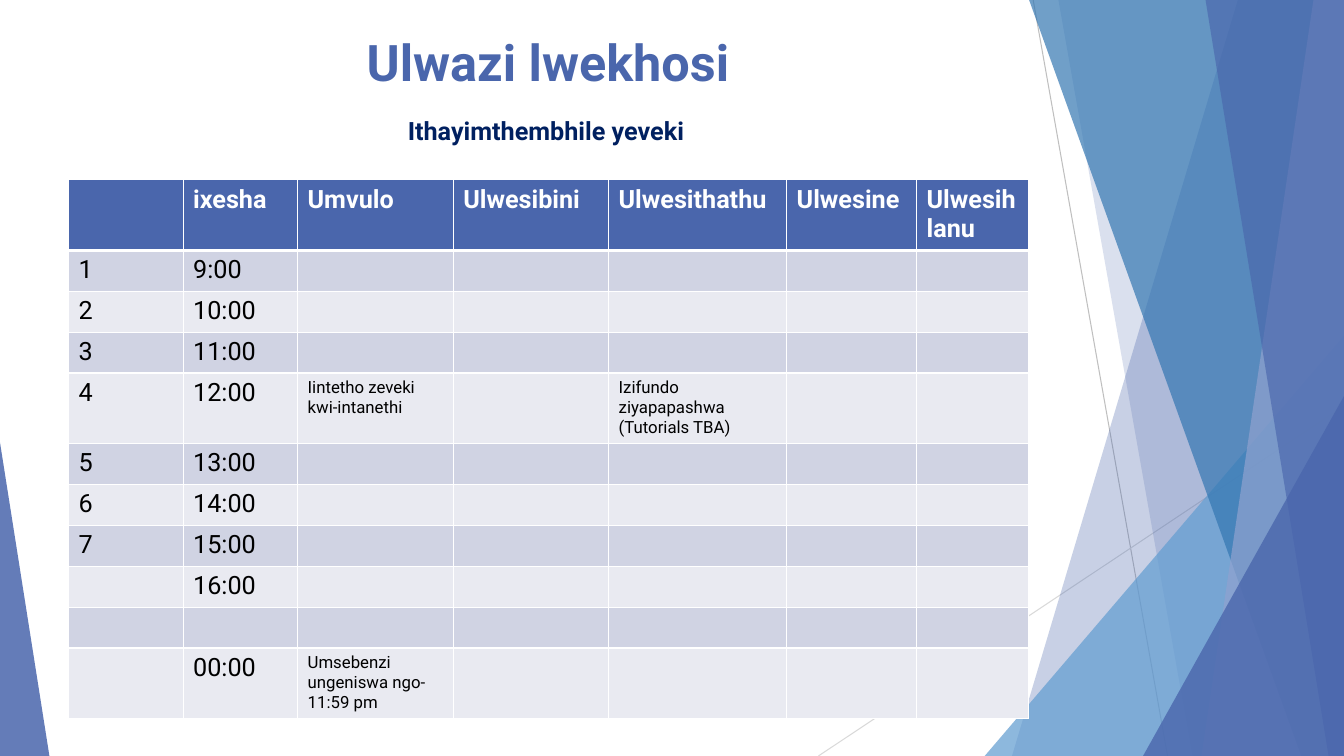
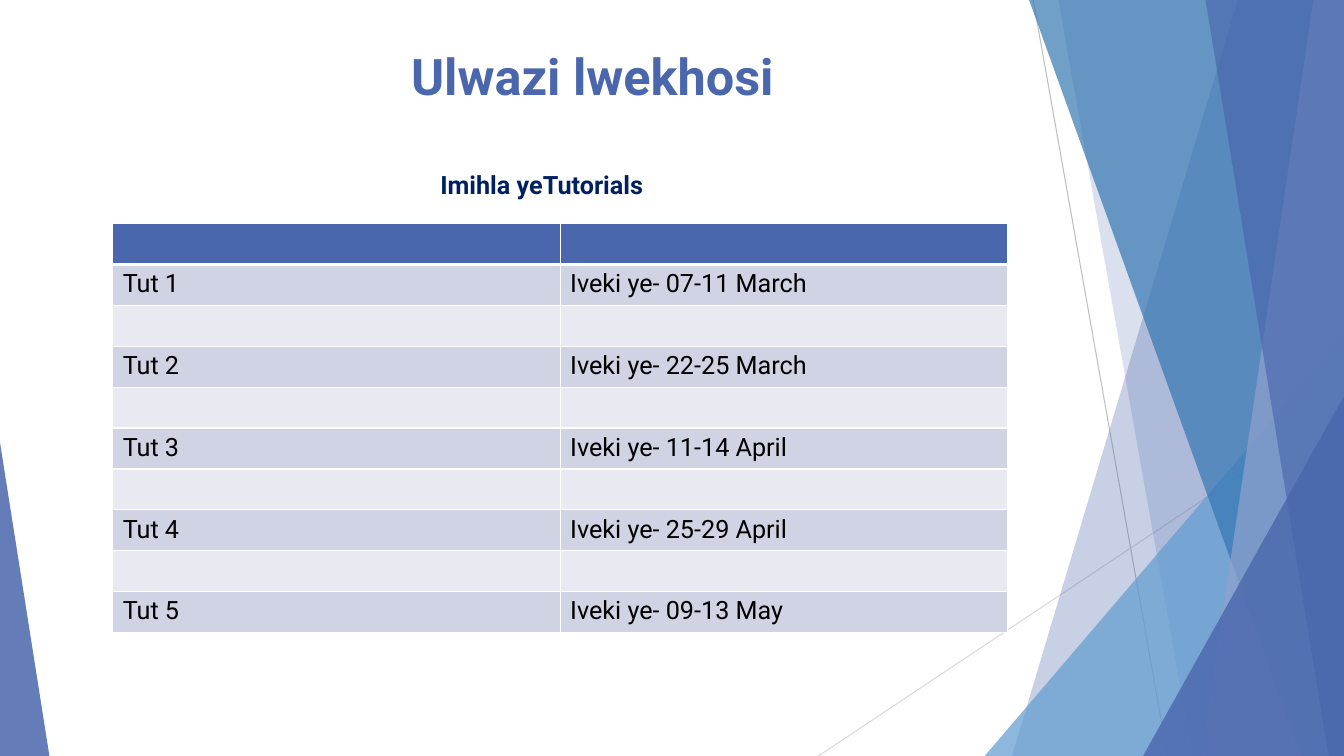
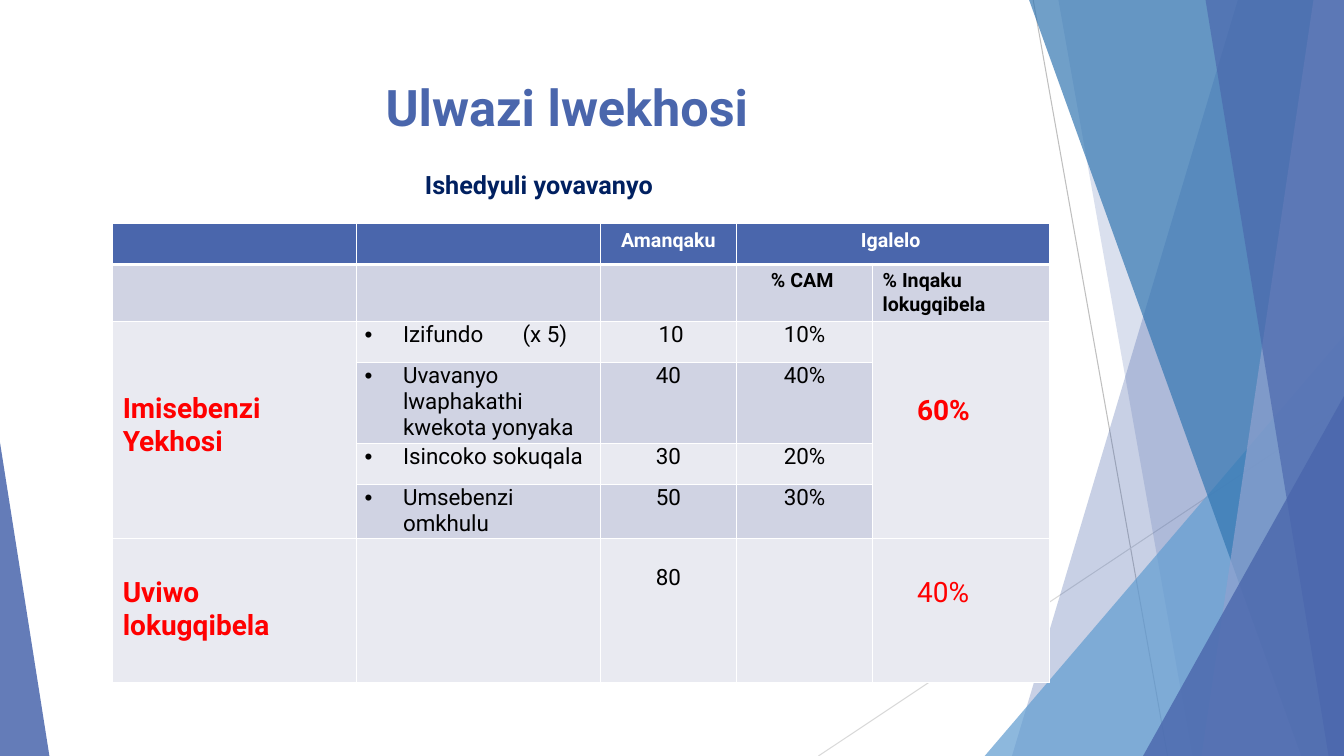
import pptx
import pptx.util
import pptx.dml.color
import pptx.enum.shapes
import pptx.enum.text
import pptx.oxml
import pptx.oxml.ns
import lxml.etree

Pt = pptx.util.Pt
Rgb = pptx.dml.color.RGBColor.from_string
qn = pptx.oxml.ns.qn
Kind = pptx.enum.shapes.MSO_SHAPE
Align = pptx.enum.text.PP_ALIGN


class Theme:
    font = "Roboto"
    blue, sky, teal, pale = "4A66AC", "629DD1", "3477B2", "90A2CF"
    navy, red, black, white = "002060", "FF0000", "000000", "FFFFFF"
    dark, light = "D0D3E3", "E9EAF1"
    title, head, body, mid, label, note = 36, 18, 18, 16, 14, 12
    large = 20


def put(frame, text, size, color, bold=False, align=None):
    for i, line in enumerate(text.split("\n")):
        para = frame.paragraphs[0] if i == 0 else frame.add_paragraph()
        para.alignment = align
        run = para.add_run()
        run.text = line
        run.font.name = Theme.font
        run.font.size = Pt(size)
        run.font.bold = bold
        run.font.color.rgb = Rgb(color)


def grid(slide, left, top, cols, rows):
    frame = slide.shapes.add_table(len(rows), len(cols), Pt(left), Pt(top), Pt(sum(cols)), Pt(sum(rows)))
    table = frame.table
    for col, width in zip(table.columns, cols):
        col.width = Pt(width)
    for r, height in enumerate(rows):
        table.rows[r].height = Pt(height)
        for cell in table.rows[r].cells:
            props = cell._tc.get_or_add_tcPr()
            for side in "LRTB":
                thick = (r, side) in ((0, "B"), (1, "T"))
                line = lxml.etree.SubElement(props, qn("a:ln" + side), w=str(Pt(3 if thick else 1)))
                fill = lxml.etree.SubElement(line, qn("a:solidFill"))
                lxml.etree.SubElement(fill, qn("a:srgbClr"), val=Theme.white)
            cell.fill.solid()
            shade = Theme.blue if r == 0 else Theme.dark if r % 2 else Theme.light
            cell.fill.fore_color.rgb = Rgb(shade)
    return table


deck = pptx.Presentation()
wide, high = 960, 540
deck.slide_width, deck.slide_height = Pt(wide), Pt(high)
blank = deck.slide_layouts[6]
for holder in list(blank.placeholders):
    holder.element.getparent().remove(holder.element)

heads = [
    ("Ulwazi lwekhosi", 391.5, 19, "Ithayimthembhile yeveki", 390, 78.5),
    ("Ulwazi lwekhosi", 423.2, 29, "Imihla yeTutorials", 387, 117.4),
    ("Ulwazi lwekhosi", 405, 50.5, "Ishedyuli yovavanyo", 385, 117.4),
]
slides = [deck.slides.add_slide(blank) for head in heads]

shapes = slides[0].shapes
for x1, y1, x2, y2, color in ((738, 0, 834, high, "BFBFBF"), (wide, 290, 584.6, high, "D9D9D9")):
    line = shapes.add_connector(pptx.enum.shapes.MSO_CONNECTOR.STRAIGHT, Pt(x1), Pt(y1), Pt(x2), Pt(y2))
    line.line.color.rgb = Rgb(color)
    line.line.width = Pt(0.75)
    lxml.etree.SubElement(line.element.spPr, qn("a:effectLst"))

bands = [
    ("band", 884.2, 722.9, Theme.blue, 30),
    ("band", 756, 851.8, Theme.blue, 20),
    ("wedge", 703.4, 239.8, 256.6, 1, Theme.sky, 72),
    ("band", 735.1, 929.5, Theme.teal, 70),
    ("band", 938.2, 858.2, Theme.pale, 70),
    ("band", 861.1, 949, Theme.blue, 65),
    ("wedge", 816.5, 283, 143.5, 1, Theme.blue, 80),
    ("wedge", 0, 316.1, 35.3, 0, Theme.blue, 85),
]
for kind, *place, color, alpha in bands:
    if kind == "band":
        upper, lower = place
        pen = shapes.build_freeform(Pt(upper), 0)
        pen.add_line_segments([(Pt(wide), 0), (Pt(wide), Pt(high)), (Pt(lower), Pt(high))])
        shape = pen.convert_to_shape()
    else:
        left, top, width, tip = place
        shape = shapes.add_shape(Kind.ISOSCELES_TRIANGLE, Pt(left), Pt(top), Pt(width), Pt(high - top))
        shape.adjustments[0] = tip
    shape.shadow.inherit = False
    shape.line.fill.background()
    shape.fill.solid()
    shape.fill.fore_color.rgb = Rgb(color)
    tint = shape.element.spPr.find(qn("a:solidFill")).find(qn("a:srgbClr"))
    lxml.etree.SubElement(tint, qn("a:alpha"), val=str(alpha * 1000))

for shape in list(shapes):
    blank.shapes.element.append(shape.element)

for slide, (title, mid, top, sub, submid, subtop) in zip(slides, heads):
    for text, center, y, width, height, size, color in (
        (title, mid, top, 676.8, 62, Theme.title, Theme.blue),
        (sub, submid, subtop, 321, 29, Theme.head, Theme.navy),
    ):
        box = slide.shapes.add_textbox(Pt(center - width / 2), Pt(y), Pt(width), Pt(height))
        box.text_frame.word_wrap = True
        put(box.text_frame, text, size, color, True, Align.CENTER)

step = 29.2
tall = 49.2
week = grid(slides[0], 49, 128.4, [81.8, 81.8, 111.2, 111, 127.2, 92.8, 80],
            [tall] + [step] * 3 + [tall] + [step] * 5 + [tall])
days = ["ixesha", "Umvulo", "Ulwesibini", "Ulwesithathu", "Ulwesine", "Ulwesihlanu"]
for c, day in enumerate(days, 1):
    put(week.cell(0, c).text_frame, day, Theme.head, Theme.white, True)
for r in range(1, 8):
    put(week.cell(r, 0).text_frame, str(r), Theme.body, Theme.black)
hours = [f"{hour}:00" for hour in range(9, 17)]
for r, hour in [*enumerate(hours, 1), (10, "00:00")]:
    put(week.cell(r, 1).text_frame, hour, Theme.body, Theme.black)
for r, c, note in (
    (4, 2, "Iintetho zeveki kwi-intanethi"),
    (4, 4, "Izifundo ziyapapashwa\n(Tutorials TBA)"),
    (10, 2, "Umsebenzi ungeniswa ngo- 11:59 pm"),
):
    put(week.cell(r, c).text_frame, note, Theme.note, Theme.black)

dates = grid(slides[1], 80.5, 159.8, [319.6] * 2, [step] * 10)
spans = ["07-11 March", "22-25 March", "11-14 April", "25-29 April", "09-13 May"]
for i, span in enumerate(spans):
    put(dates.cell(2 * i + 1, 0).text_frame, f"Tut {i + 1}", Theme.body, Theme.black)
    put(dates.cell(2 * i + 1, 1).text_frame, f"Iveki ye- {span}", Theme.body, Theme.black)

marks = grid(slides[2], 80.5, 159.8, [174.2, 174.2, 97.2, 97.2, 126.6],
             [step, 40.8, step, 57.8, step, 38.6, 103])
marks.cell(0, 3).merge(marks.cell(0, 4))
for c in (0, 4):
    marks.cell(2, c).merge(marks.cell(5, c))
for r, c, text, color, align in (
    (0, 2, "Amanqaku", Theme.white, Align.CENTER),
    (0, 3, "Igalelo ", Theme.white, Align.CENTER),
    (1, 3, "% CAM", Theme.black, None),
    (1, 4, "% Inqaku lokugqibela", Theme.black, None),
):
    put(marks.cell(r, c).text_frame, text, Theme.label, color, True, align)
marks.cell(1, 3).margin_left = Pt(24.6)

tasks = [
    ("Izifundo", " 10", "10%"),
    ("Uvavanyo lwaphakathi kwekota yonyaka", "40", "40%"),
    ("Isincoko sokuqala", "30", "20%"),
    ("Umsebenzi omkhulu", "50", "30%"),
    ("", "80", ""),
]
for r, texts in enumerate(tasks, 2):
    for c, text in enumerate(texts, 1):
        if not text:
            continue
        cell = marks.cell(r, c)
        cell.margin_left = cell.margin_right = Pt(5.8)
        cell.margin_top = cell.margin_bottom = 0
        put(cell.text_frame, text, Theme.mid, Theme.black, False, None if c == 1 else Align.CENTER)
        if c == 1:
            props = cell.text_frame.paragraphs[0]._p.get_or_add_pPr()
            props.set("marL", str(Pt(27.4)))
            props.set("indent", str(-Pt(27.4)))
            lxml.etree.SubElement(props, qn("a:buFont"), typeface="Arial")
            lxml.etree.SubElement(props, qn("a:buChar"), char="•")
marks.cell(6, 2).margin_top = Pt(18.8)

first = marks.cell(2, 1).text_frame
for text in (" ", "(x 5)"):
    put(first, text, Theme.mid, Theme.black)
gap = first.paragraphs[0].runs[1]
gap.font._element.set("spc", "2400")

for r, c, text, bold, left, top in (
    (2, 0, "Imisebenzi Yekhosi", True, 7.2, 50.5),
    (2, 4, "60%", True, 31.8, 52),
    (6, 0, "Uviwo lokugqibela", True, 7.2, 27),
    (6, 4, "40%", False, 31.8, 27),
):
    cell = marks.cell(r, c)
    cell.margin_left, cell.margin_top = Pt(left), Pt(top)
    put(cell.text_frame, text, Theme.large, Theme.red, bold)

deck.save("out.pptx")
